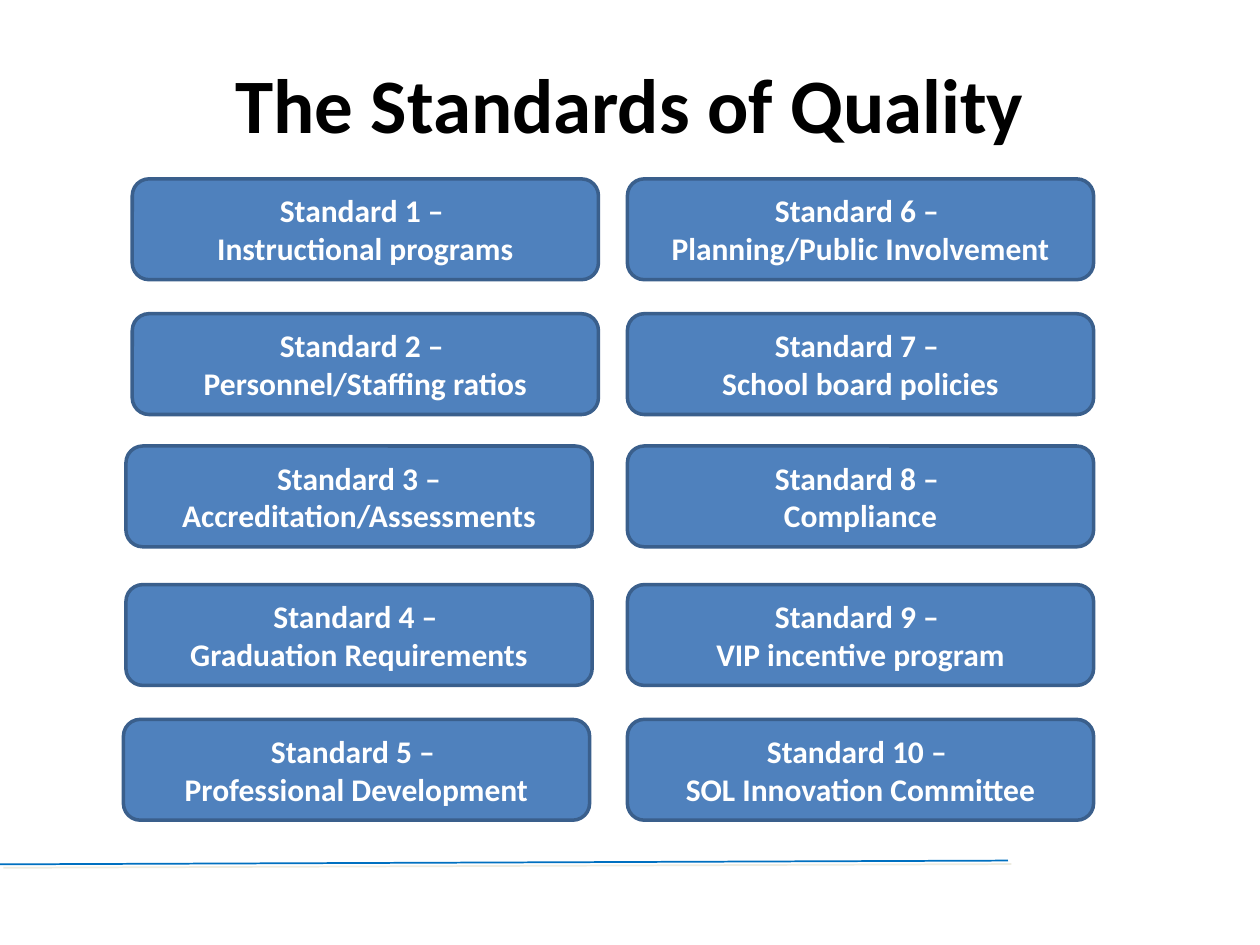
import pptx
import pptx.dml.color
import pptx.enum.shapes
import pptx.enum.text
import pptx.oxml
import pptx.oxml.ns
import pptx.util
from pptx.util import Inches

COLORS = {
    "title": "000000",
    "card": "4F81BD",
    "card_edge": "3A5F8C",
    "card_text": "FFFFFF",
    "rule": "0070C0",
    "rule_shadow": "EEECE1",
}

ROW_TOPS = [1.42, 2.49, 3.54, 4.64, 5.71]
COLUMNS = [
    ([1.05, 1.05, 1, 1, 0.98], [
        ["Standard 1 – ", "Instructional programs"],
        ["Standard 2 – ", "Personnel/Staffing ratios"],
        ["Standard 3 – Accreditation/Assessments"],
        ["Standard 4 – ", "Graduation Requirements"],
        ["Standard 5 – ", "Professional Development"],
    ]),
    ([4.98] * 5, [
        ["Standard 6 – ", "Planning/Public Involvement"],
        ["Standard 7 – ", "School board policies"],
        ["Standard 8 – ", "Compliance"],
        ["Standard 9 – ", "VIP incentive program"],
        ["Standard 10 – ", "SOL Innovation Committee"],
    ]),
]


def rgb(name):
    return pptx.dml.color.RGBColor.from_string(COLORS[name])


def write_text(frame, lines, *, size, color, font="Calibri", bold=True):
    frame.word_wrap = True
    frame.auto_size = pptx.enum.text.MSO_AUTO_SIZE.NONE
    frame.vertical_anchor = pptx.enum.text.MSO_ANCHOR.MIDDLE
    for index, line in enumerate(lines):
        paragraph = frame.add_paragraph() if index else frame.paragraphs[0]
        paragraph.alignment = pptx.enum.text.PP_ALIGN.CENTER
        run = paragraph.add_run()
        run.text = line
        run.font.name = font
        run.font.size = pptx.util.Pt(size)
        run.font.bold = bold
        run.font.color.rgb = rgb(color)


class SlideBuilder:
    title_size = 44
    card_size = 18
    card_width = Inches(3.7)
    card_height = Inches(0.8)

    def __init__(self, slide):
        self.slide = slide

    def title(self, text, left, top, width, height):
        heading = self.slide.shapes.title
        heading.left, heading.top = left, top
        heading.width, heading.height = width, height
        write_text(heading.text_frame, [text], size=self.title_size, color="title")

    def rule(self, start_x, start_y, end_x, end_y):
        rule = self.slide.shapes.add_connector(
            pptx.enum.shapes.MSO_CONNECTOR.STRAIGHT, start_x, start_y, end_x, end_y)
        rule.line.color.rgb = rgb("rule")
        rule.line.width = pptx.util.Pt(1)
        rule.element.spPr.append(pptx.oxml.parse_xml(
            f'<a:effectLst {pptx.oxml.ns.nsdecls("a")}>'
            f'<a:outerShdw dist="{pptx.util.Pt(2.8)}" dir="2700000" algn="ctr" rotWithShape="0">'
            f'<a:srgbClr val="{COLORS["rule_shadow"]}"/></a:outerShdw></a:effectLst>'))

    def card(self, lines, left, top):
        card = self.slide.shapes.add_shape(
            pptx.enum.shapes.MSO_SHAPE.ROUNDED_RECTANGLE,
            left, top, self.card_width, self.card_height)
        card.shadow.inherit = False
        card.fill.solid()
        card.fill.fore_color.rgb = rgb("card")
        card.line.color.rgb = rgb("card_edge")
        card.line.width = pptx.util.Pt(2)
        write_text(card.text_frame, lines, size=self.card_size, color="card_text")


def main():
    deck = pptx.Presentation()
    deck.slide_width, deck.slide_height = Inches(10), Inches(7.5)
    builder = SlideBuilder(deck.slides.add_slide(deck.slide_layouts[5]))
    builder.rule(Inches(8), Inches(6.83), Inches(0), Inches(6.86))
    builder.title("The Standards of Quality",
                  Inches(0.5), Inches(0.3), Inches(9), Inches(1.03))
    for lefts, standards in COLUMNS:
        for left, top, lines in zip(lefts, ROW_TOPS, standards):
            builder.card(lines, Inches(left), Inches(top))
    deck.save("out.pptx")


if __name__ == "__main__":
    main()
